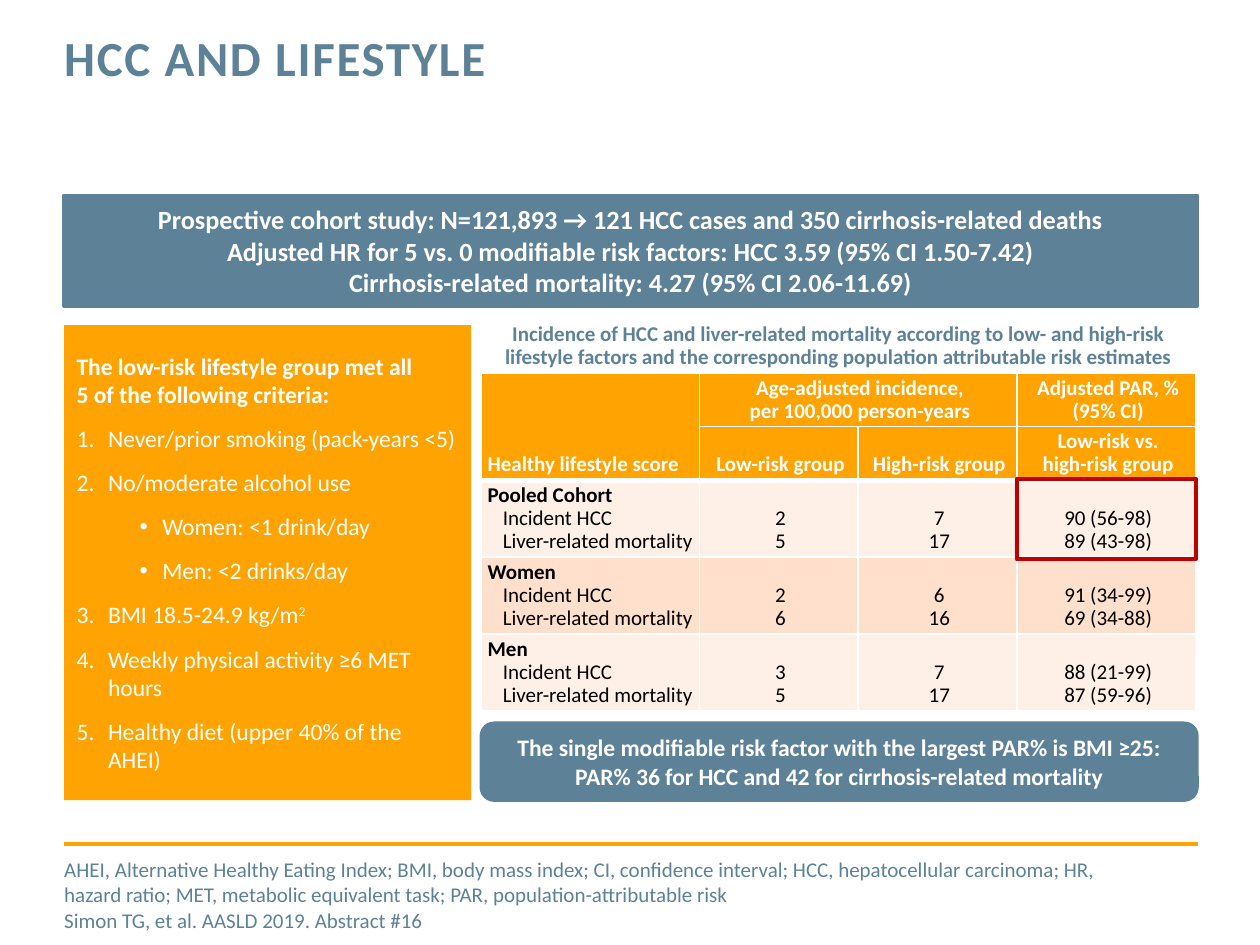
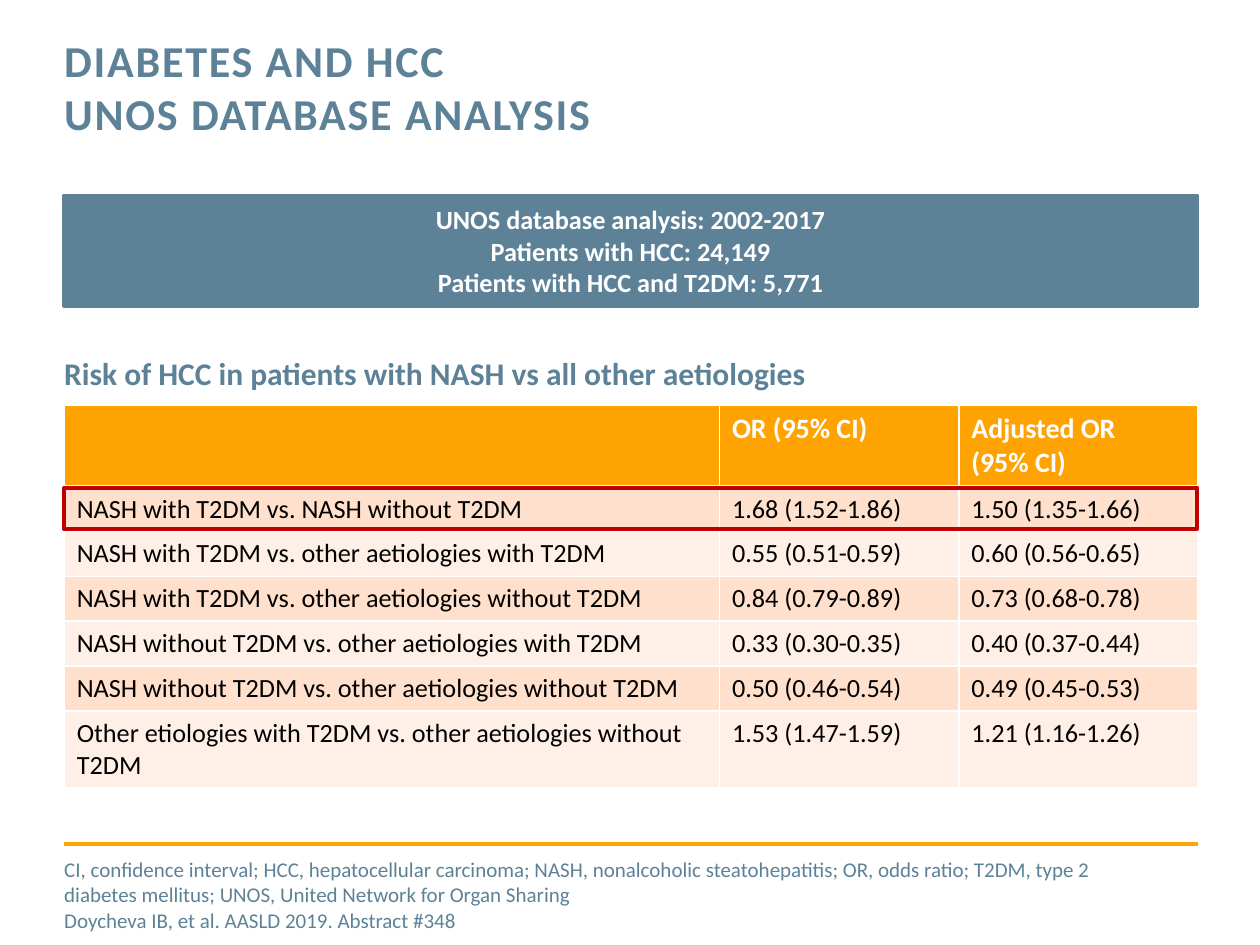
from lxml.etree import SubElement
from pptx import Presentation
from pptx.dml.color import RGBColor
from pptx.enum.shapes import MSO_CONNECTOR, MSO_SHAPE
from pptx.enum.text import MSO_ANCHOR, MSO_AUTO_SIZE, PP_ALIGN
from pptx.oxml.ns import qn
from pptx.util import Inches, Pt

FONT = "Calibri"
SLATE, ORANGE, RULE_ORANGE = "5D8298", "FEA302", "FFA402"
PALE, PEACH = "FFF0E7", "FFE0CC"
WHITE, BLACK, RED = "FFFFFF", "000000", "C00000"
LEFT, WIDTH = 0.51, 8.99


def color(hex_string):
    return RGBColor.from_string(hex_string)


class Deck:
    """Holds the shared style and the current slide."""

    def __init__(self):
        self.presentation = Presentation()
        self.presentation.slide_width = Inches(10)
        self.presentation.slide_height = Inches(7.5)
        self.slide = None

    # Text
    def run(self, paragraph, text, size, ink, bold=False, raised=False, tracking=0):
        for index, line in enumerate(text.split("\n")):
            if index:
                paragraph.add_line_break()
                line_break = paragraph._p.findall(qn("a:br"))[-1]
                SubElement(line_break, qn("a:rPr"), sz=str(round(size * 100)))
            run = paragraph.add_run()
            run.text = line
            run.font.name, run.font.size, run.font.bold = FONT, Pt(size), bold
            run.font.color.rgb = color(ink)
            properties = run._r.get_or_add_rPr()
            if raised:
                properties.set("baseline", "30000")
            if tracking:
                properties.set("spc", str(tracking * 100))

    def paragraph(self, frame, text, size, ink, bold=False, align=PP_ALIGN.LEFT,
                  spacing=None, indent=0, before=0, tracking=0):
        first = frame.paragraphs[0]
        paragraph = frame.add_paragraph() if first.runs else first
        paragraph.alignment = align
        paragraph.space_before = Pt(before)
        if spacing:
            paragraph.line_spacing = spacing
        if indent:
            paragraph._p.get_or_add_pPr().set("marL", str(Inches(indent)))
        if text:
            self.run(paragraph, text, size, ink, bold, tracking=tracking)
        return paragraph

    def bullet(self, paragraph, indent, hanging, symbol=None):
        properties = paragraph._p.get_or_add_pPr()
        properties.set("marL", str(Inches(indent)))
        properties.set("indent", str(-Inches(hanging)))
        SubElement(properties, qn("a:buFont"), typeface="Arial" if symbol else "+mj-lt")
        if symbol:
            SubElement(properties, qn("a:buChar"), char=symbol)
        else:
            SubElement(properties, qn("a:buAutoNum"), type="arabicPeriod")

    def plain_frame(self, shape):
        frame = shape.text_frame
        frame.word_wrap, frame.auto_size = True, MSO_AUTO_SIZE.NONE
        frame.vertical_anchor = MSO_ANCHOR.TOP
        frame.margin_left = frame.margin_right = frame.margin_top = frame.margin_bottom = 0
        return frame

    def text_box(self, left, top, width, height, lines, size, **style):
        box = self.slide.shapes.add_textbox(
            Inches(left), Inches(top), Inches(width), Inches(height))
        frame = self.plain_frame(box)
        for line in lines:
            self.paragraph(frame, line, size, SLATE, **style)

    # Slide with title, rule and footnotes
    def new_slide(self, title, title_size, footnotes):
        self.slide = self.presentation.slides.add_slide(self.presentation.slide_layouts[5])
        placeholder = self.slide.shapes.title
        placeholder.left, placeholder.top = Inches(LEFT), Inches(0.27)
        placeholder.width, placeholder.height = Inches(7.17), Inches(0.88)
        self.paragraph(self.plain_frame(placeholder), title, title_size, SLATE,
                       bold=True, spacing=Pt(30), tracking=1)
        rule = self.slide.shapes.add_connector(
            MSO_CONNECTOR.STRAIGHT, Inches(LEFT), Inches(6.7), Inches(LEFT + 9), Inches(6.7))
        rule.line.color.rgb, rule.line.width = color(RULE_ORANGE), Pt(2)
        SubElement(rule._element.spPr, qn("a:effectLst"))
        self.text_box(LEFT, 6.8, 8.35, 0.61, footnotes, 12)

    # Shapes
    def shape(self, kind, left, top, width, height, fill=None, line=None, line_width=2):
        shape = self.slide.shapes.add_shape(
            kind, Inches(left), Inches(top), Inches(width), Inches(height))
        shape.shadow.inherit = False
        if fill:
            shape.fill.solid()
            shape.fill.fore_color.rgb = color(fill)
        else:
            shape.fill.background()
        if line:
            shape.line.color.rgb, shape.line.width = color(line), Pt(line_width)
        else:
            shape.line.fill.background()
        shape.text_frame.word_wrap = True
        shape.text_frame.vertical_anchor = MSO_ANCHOR.MIDDLE
        return shape

    def callout(self, kind, left, top, width, height, lines, size):
        shape = self.shape(kind, left, top, width, height, SLATE, SLATE)
        for line in lines:
            self.paragraph(shape.text_frame, line, size, WHITE, True, PP_ALIGN.CENTER)

    def banner(self, lines):
        self.callout(MSO_SHAPE.RECTANGLE, LEFT, 1.55, WIDTH, 0.88, lines, 15)

    def highlight(self, left, top, width, height):
        self.shape(MSO_SHAPE.RECTANGLE, left, top, width, height, line=RED, line_width=2.25)

    # Tables
    def table(self, left, top, widths, heights):
        table = self.slide.shapes.add_table(
            len(heights), len(widths), Inches(left), Inches(top),
            Inches(sum(widths)), Inches(sum(heights))).table
        table.first_row = table.horz_banding = False
        for column, width in zip(table.columns, widths):
            column.width = Inches(width)
        for row, height in zip(table.rows, heights):
            row.height = Inches(height)
        return table

    def style_cells(self, table, header_rows, band_fills):
        for row_index, row in enumerate(table.rows):
            header = row_index < header_rows
            fill = ORANGE if header else band_fills[(row_index - header_rows) % 2]
            for cell in row.cells:
                top = 3 if row_index == header_rows else 1
                bottom = 3 if row_index == header_rows - 1 else 1
                for side, points in (("L", 1), ("R", 1), ("T", top), ("B", bottom)):
                    border = SubElement(cell._tc.get_or_add_tcPr(), qn(f"a:ln{side}"),
                                        w=str(Pt(points)))
                    SubElement(SubElement(border, qn("a:solidFill")),
                               qn("a:srgbClr"), val=WHITE)
                cell.fill.solid()
                cell.fill.fore_color.rgb = color(fill)

    def compact_cell(self, cell, anchor):
        cell.margin_left, cell.margin_right = Inches(0.05), Inches(0.02)
        cell.margin_top = cell.margin_bottom = Inches(0.03)
        cell.vertical_anchor = anchor
        return cell.text_frame


def add_criteria(deck):
    size = 13.5
    frame = deck.shape(MSO_SHAPE.RECTANGLE, LEFT, 2.58, 3.23, 3.77, ORANGE).text_frame
    deck.paragraph(frame, "The low-risk lifestyle group met all\n5 of the following criteria:",
                   size, WHITE, True)
    criteria = [
        (0, "Never/prior smoking (pack-years <5)"),
        (0, "No/moderate alcohol use"),
        (1, "Women: <1 drink/day"),
        (1, "Men: <2 drinks/day"),
        (0, "BMI 18.5-24.9 kg/m"),
        (0, "Weekly physical activity ≥6 MET hours"),
        (0, "Healthy diet (upper 40% of the AHEI)"),
    ]
    for level, text in criteria:
        paragraph = deck.paragraph(frame, text, size, WHITE, before=9)
        paragraph.level = level
        if level:
            deck.bullet(paragraph, 0.68, 0.18, "•")
        else:
            deck.bullet(paragraph, 0.25, 0.25)
        if text.endswith("kg/m"):
            deck.run(paragraph, "2", size, WHITE, raised=True)


def add_incidence_table(deck):
    table = deck.table(3.82, 2.96, [1.73, 1.26, 1.26, 1.42], [0.42, 0.42, 0.61, 0.61, 0.61])
    deck.style_cells(table, 2, [PALE, PEACH])
    table.cell(0, 0).merge(table.cell(1, 0))
    table.cell(0, 1).merge(table.cell(0, 2))

    # Two header rows
    headers = [
        (0, 0, "Healthy lifestyle score"),
        (0, 1, "Age-adjusted incidence,\nper 100,000 person-years"),
        (0, 3, "Adjusted PAR, % (95% CI)"),
        (1, 1, "Low-risk group"),
        (1, 2, "High-risk group"),
        (1, 3, "Low-risk vs.\nhigh-risk group"),
    ]
    for row, column, text in headers:
        at_bottom = row == 1 or column == 0
        frame = deck.compact_cell(table.cell(row, column),
                                  MSO_ANCHOR.BOTTOM if at_bottom else MSO_ANCHOR.TOP)
        align = PP_ALIGN.CENTER if column else PP_ALIGN.LEFT
        deck.paragraph(frame, text, 12, WHITE, True, align, 0.9)

    # Cohorts, each with two outcomes
    cohorts = [
        ("Pooled Cohort", ("2", "5"), ("7", "17"), ("90 (56-98)", "89 (43-98)")),
        ("Women", ("2", "6"), ("6", "16"), ("91 (34-99)", "69 (34-88)")),
        ("Men", ("3", "5"), ("7", "17"), ("88 (21-99)", "87 (59-96)")),
    ]
    for row, (cohort, *columns) in enumerate(cohorts, start=2):
        frame = deck.compact_cell(table.cell(row, 0), MSO_ANCHOR.TOP)
        deck.paragraph(frame, cohort, 12, BLACK, True, spacing=0.9)
        for outcome in ("Incident HCC", "Liver-related mortality"):
            deck.paragraph(frame, outcome, 12, BLACK, spacing=0.9, indent=0.12)
        for column, values in enumerate(columns, start=1):
            frame = deck.compact_cell(table.cell(row, column), MSO_ANCHOR.BOTTOM)
            for value in values:
                deck.paragraph(frame, value, 12, BLACK, align=PP_ALIGN.CENTER, spacing=0.9)


def add_lifestyle_slide(deck):
    deck.new_slide("HCC AND LIFESTYLE", 28, [
        "AHEI, Alternative Healthy Eating Index; BMI, body mass index; CI, confidence interval; "
        "HCC, hepatocellular carcinoma; HR, hazard ratio; MET, metabolic equivalent task; "
        "PAR, population-attributable risk",
        "Simon TG, et al. AASLD 2019. Abstract #16"])
    deck.banner([
        "Prospective cohort study: N=121,893 → 121 HCC cases and 350 cirrhosis-related deaths",
        "Adjusted HR for 5 vs. 0 modifiable risk factors: HCC 3.59 (95% CI 1.50-7.42)",
        "Cirrhosis-related mortality: 4.27 (95% CI 2.06-11.69)"])
    add_criteria(deck)
    deck.text_box(3.82, 2.57, 5.67, 0.47, [
        "Incidence of HCC and liver-related mortality according to low- and high-risk lifestyle "
        "factors and the corresponding population attributable risk estimates"],
        12, bold=True, align=PP_ALIGN.CENTER, spacing=0.9)
    add_incidence_table(deck)
    deck.highlight(8.07, 3.8, 1.42, 0.64)
    deck.callout(MSO_SHAPE.ROUNDED_RECTANGLE, 3.82, 5.74, 5.68, 0.61, [
        "The single modifiable risk factor with the largest PAR% is BMI ≥25: "
        "PAR% 36 for HCC and 42 for cirrhosis-related mortality"], 13.5)


def add_diabetes_slide(deck):
    deck.new_slide("DIABETES AND HCC\nUNOS DATABASE ANALYSIS", 25.2, [
        "CI, confidence interval; HCC, hepatocellular carcinoma; NASH, nonalcoholic "
        "steatohepatitis; OR, odds ratio; T2DM, type 2 diabetes mellitus; "
        "UNOS, United Network for Organ Sharing",
        "Doycheva IB, et al. AASLD 2019. Abstract #348"])
    deck.banner(["UNOS database analysis: 2002-2017", "Patients with HCC: 24,149",
                 "Patients with HCC and T2DM: 5,771"])
    deck.text_box(LEFT, 2.81, WIDTH, 0.47,
                  ["Risk of HCC in patients with NASH vs all other aetiologies"], 18, bold=True)

    # Odds ratios
    rows = [
        ("", "OR (95% CI)", "Adjusted OR\n(95% CI)"),
        ("NASH with T2DM vs. NASH without T2DM", "1.68 (1.52-1.86)", "1.50 (1.35-1.66)"),
        ("NASH with T2DM vs. other aetiologies with T2DM",
         "0.55 (0.51-0.59)", "0.60 (0.56-0.65)"),
        ("NASH with T2DM vs. other aetiologies without T2DM",
         "0.84 (0.79-0.89)", "0.73 (0.68-0.78)"),
        ("NASH without T2DM vs. other aetiologies with T2DM",
         "0.33 (0.30-0.35)", "0.40 (0.37-0.44)"),
        ("NASH without T2DM vs. other aetiologies without T2DM",
         "0.50 (0.46-0.54)", "0.49 (0.45-0.53)"),
        ("Other etiologies with T2DM vs. other aetiologies without T2DM",
         "1.53 (1.47-1.59)", "1.21 (1.16-1.26)"),
    ]
    table = deck.table(LEFT, 3.22, [5.2, 1.9, 1.9], [0.64] + [0.35] * 5 + [0.6])
    deck.style_cells(table, 1, [PEACH, PALE])
    for row, texts in enumerate(rows):
        size, ink = (15, BLACK) if row else (16, WHITE)
        for column, text in enumerate(texts):
            deck.paragraph(table.cell(row, column).text_frame, text, size, ink, bold=row == 0)
    deck.highlight(LEFT, 3.87, WIDTH, 0.33)


def main():
    deck = Deck()
    add_lifestyle_slide(deck)
    add_diabetes_slide(deck)
    deck.presentation.save("out.pptx")


if __name__ == "__main__":
    main()
